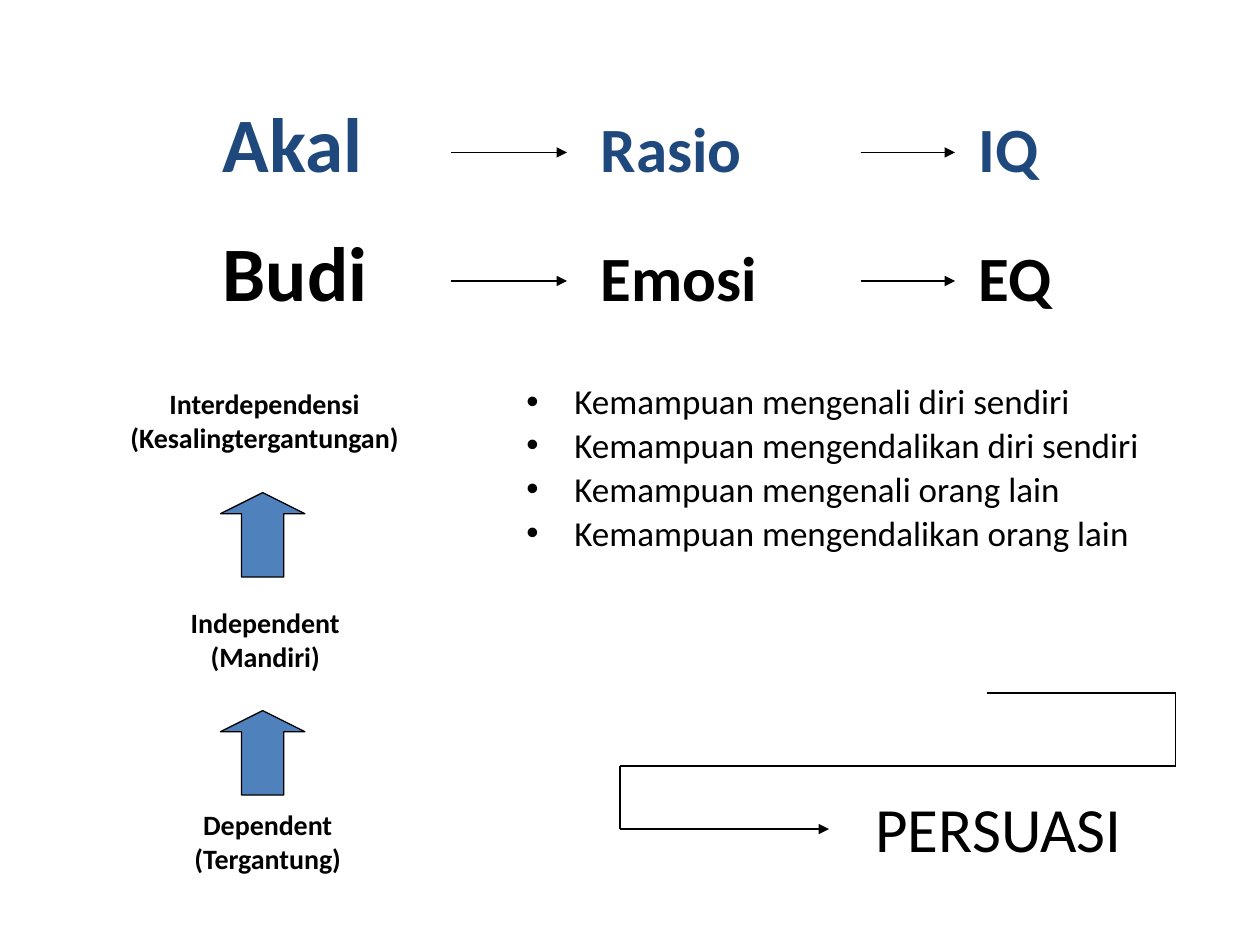
from itertools import pairwise

from lxml import etree
from pptx import Presentation
from pptx.dml.color import RGBColor
from pptx.enum.shapes import MSO_CONNECTOR, MSO_SHAPE
from pptx.enum.text import MSO_ANCHOR, PP_ALIGN
from pptx.oxml.ns import qn
from pptx.util import Inches, Pt

STRAIGHT = MSO_CONNECTOR.STRAIGHT
UP_ARROW = MSO_SHAPE.UP_ARROW
MIDDLE = MSO_ANCHOR.MIDDLE
LEFT, CENTER = PP_ALIGN.LEFT, PP_ALIGN.CENTER

FONT = "Calibri"
BLACK, NAVY, BLUE = "000000", "1F497D", "4F81BD"

ABILITIES = [
    "Kemampuan mengenali diri sendiri",
    "Kemampuan mengendalikan diri sendiri",
    "Kemampuan mengenali orang lain",
    "Kemampuan mengendalikan orang lain",
]


def rgb(color):
    return RGBColor.from_string(color)


def style(run, size, color=BLACK, bold=False):
    run.font.name = FONT
    run.font.size = Pt(size)
    run.font.bold = bold
    run.font.color.rgb = rgb(color)


def add_frame(slide, left, top, width, height, wrap=True):
    box = slide.shapes.add_textbox(
        Inches(left), Inches(top), Inches(width), Inches(height))
    box.text_frame.word_wrap = wrap
    return box.text_frame


def add_label(slide, lines, left, top, width, height, size,
              bold=False, align=LEFT, wrap=True):
    frame = add_frame(slide, left, top, width, height, wrap)
    frame.text = "\n".join(lines)
    for paragraph in frame.paragraphs:
        paragraph.alignment = align
        for run in paragraph.runs:
            style(run, size, bold=bold)


def add_line(slide, start, end, arrow=False):
    line = slide.shapes.add_connector(
        STRAIGHT, *(Inches(value) for value in (*start, *end)))
    line.line.color.rgb = rgb(BLACK)
    line.line.width = Pt(0.75)
    if arrow:
        etree.SubElement(line.line._get_or_add_ln(), qn("a:tailEnd"), type="triangle")
    etree.SubElement(line._element.spPr, qn("a:effectLst"))


def add_concept_row(slide, top, arrow_y, concept, faculty, quotient, color, gap_size):
    """One heading row: concept -> faculty -> quotient, aligned on tab stops."""
    frame = add_frame(slide, 1.67, top, 8, 1.25)
    frame.vertical_anchor = MIDDLE
    paragraph = frame.paragraphs[0]
    tabs = etree.SubElement(paragraph._p.get_or_add_pPr(), qn("a:tabLst"))
    for stop in (3, 6):
        etree.SubElement(tabs, qn("a:tab"), pos=str(Inches(stop)), algn="l")
    parts = [(concept, 44), ("\t", gap_size), (f"{faculty}\t{quotient}", 36)]
    for text, size in parts:
        run = paragraph.add_run()
        run.text = text
        style(run, size, color, bold=True)
    for start, end in ((3.58, 4.5), (6.83, 7.58)):
        add_line(slide, (start, arrow_y), (end, arrow_y), arrow=True)


def add_bullets(slide, items):
    frame = add_frame(slide, 4.08, 3, 5.25, 3.12)
    frame.text = "\n".join(items)
    for index, paragraph in enumerate(frame.paragraphs):
        paragraph.line_spacing = 0.9
        if index:
            paragraph.space_before = Pt(3.5)
        properties = paragraph._p.get_or_add_pPr()
        properties.set("marL", str(Inches(0.38)))
        properties.set("indent", str(Inches(-0.38)))
        etree.SubElement(properties, qn("a:buFont"), typeface="Arial")
        etree.SubElement(properties, qn("a:buChar"), char="•")
        style(paragraph.runs[0], 20)


def add_growth_arrow(slide, top):
    arrow = slide.shapes.add_shape(
        UP_ARROW, Inches(1.75), Inches(top), Inches(0.67), Inches(0.67))
    arrow.adjustments[0] = 0.5
    arrow.adjustments[1] = 0.25
    arrow.shadow.inherit = False
    arrow.fill.solid()
    arrow.fill.fore_color.rgb = rgb(BLUE)
    arrow.line.color.rgb = rgb(BLACK)
    arrow.line.width = Pt(0.75)


def main():
    presentation = Presentation()
    presentation.slide_width = Inches(10)
    presentation.slide_height = Inches(7.5)
    slide = presentation.slides.add_slide(presentation.slide_layouts[6])

    # Mind and character rows
    add_concept_row(slide, 0.5, 1.21, "Akal", "Rasio", "IQ", NAVY, 44)
    add_concept_row(slide, 1.5, 2.23, "Budi", "Emosi", "EQ", BLACK, 48)

    # Emotional abilities
    add_bullets(slide, ABILITIES)

    # Stages of maturity, from the bottom up
    add_label(slide, ["Dependent (Tergantung)"], 1, 6.36, 2.25, 0.64,
              16, bold=True, align=CENTER)
    add_label(slide, ["Independent (Mandiri)"], 0.98, 4.76, 2.25, 0.64,
              16, bold=True, align=CENTER)
    add_label(slide, ["Interdependensi", "(Kesalingtergantungan)"],
              0.75, 3.02, 2.7, 0.64, 16, bold=True, align=CENTER, wrap=False)
    for top in (5.64, 3.91):
        add_growth_arrow(slide, top)

    # Bent path leading to persuasion
    route = [(7.83, 5.5), (9.33, 5.5), (9.33, 6.08),
             (4.92, 6.08), (4.92, 6.58), (6.58, 6.58)]
    for start, end in pairwise(route):
        add_line(slide, start, end, arrow=end == route[-1])
    add_label(slide, ["PERSUASI"], 6.85, 6.22, 2.73, 0.7, 36, wrap=False)

    presentation.save("out.pptx")


if __name__ == "__main__":
    main()
